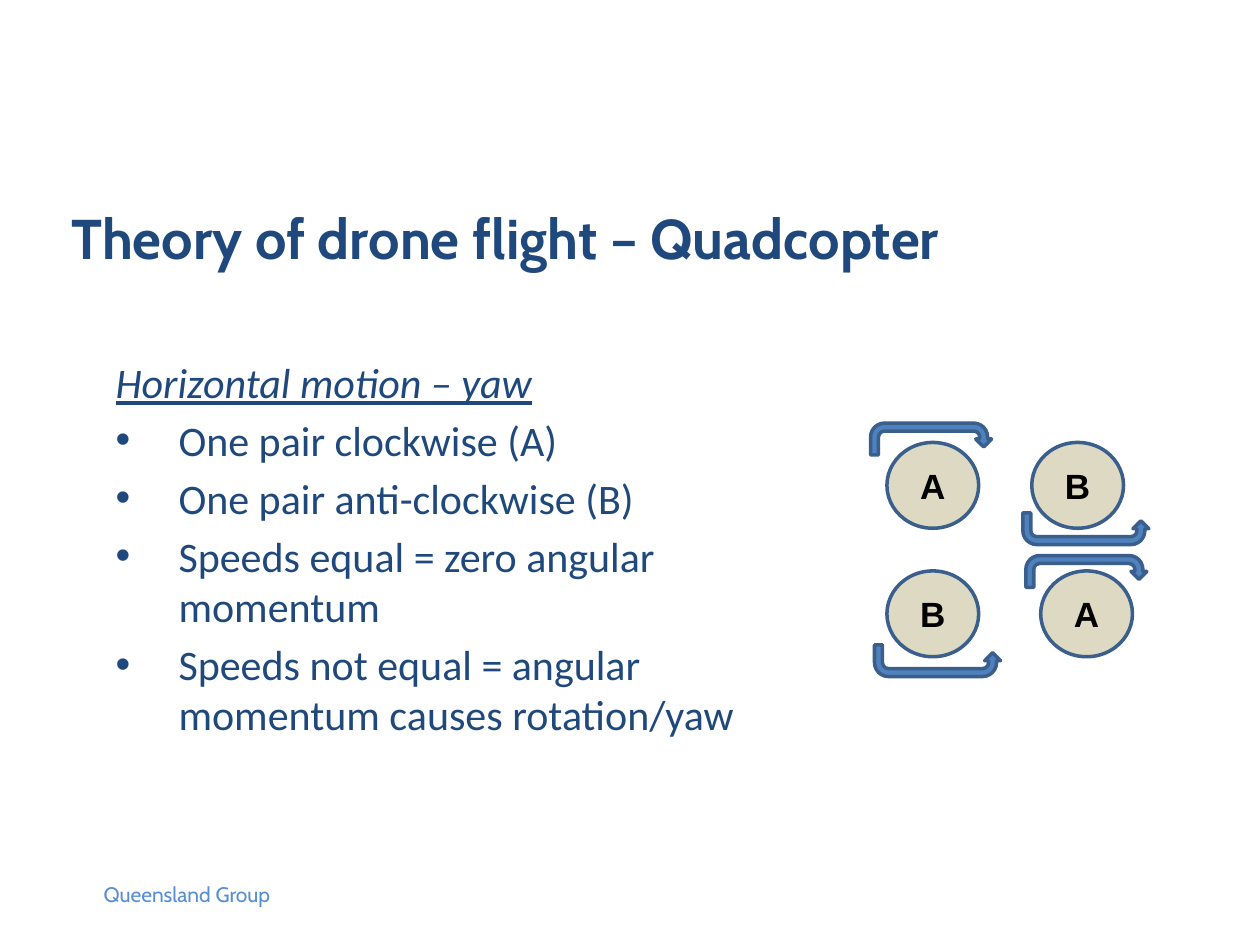
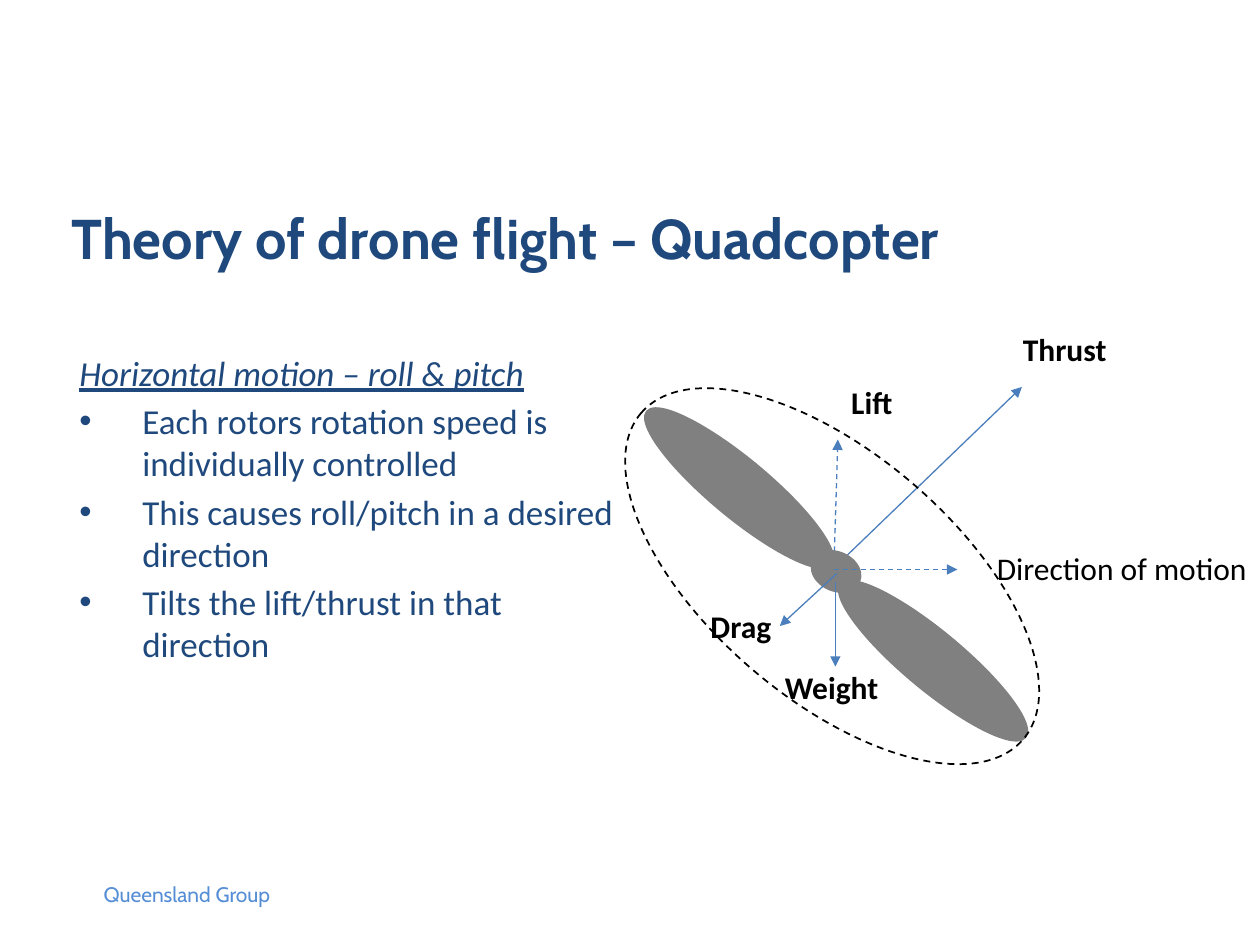
from lxml import etree
from pptx import Presentation
from pptx import util as u
from pptx.dml.color import RGBColor
from pptx.enum import dml, shapes, text
from pptx.oxml import ns

NAVY = RGBColor(0x1F, 0x49, 0x7D)
SKY = RGBColor(0x55, 0x8E, 0xD5)
BLUE = RGBColor(0x4F, 0x81, 0xBD)
EDGE_BLUE = RGBColor(0x3A, 0x5F, 0x8C)
ARROW_BLUE = RGBColor(0x4B, 0x7E, 0xBC)
SAND = RGBColor(0xDD, 0xD9, 0xC3)
GREY = RGBColor(0x80, 0x80, 0x80)
BLACK = RGBColor(0x00, 0x00, 0x00)

SHAPE = shapes.MSO_SHAPE
CENTRE = text.PP_ALIGN.CENTER
MIDDLE = text.MSO_ANCHOR.MIDDLE


def cm(*values):
    return [u.Cm(value) for value in values]


def write(paragraph, words, font="Calibri", size=18, color=BLACK, bold=False,
          italic=False, underline=False, align=text.PP_ALIGN.LEFT):
    paragraph.alignment = align
    run = paragraph.add_run()
    run.text = words
    run.font.name, run.font.size = font, u.Pt(size)
    run.font.color.rgb = color
    run.font.bold, run.font.italic, run.font.underline = bold, italic, underline


def add_bullet(paragraph):
    properties = paragraph._p.get_or_add_pPr()
    indent = u.Cm(1.27)
    properties.set("marL", str(indent))
    properties.set("indent", str(-indent))
    etree.SubElement(properties, ns.qn("a:buFont"), typeface="Arial")
    etree.SubElement(properties, ns.qn("a:buChar"), char="•")


class Deck:
    """Shared style and the slide being drawn."""

    def __init__(self):
        self.presentation = Presentation()
        self.presentation.slide_width = u.Cm(25.4)
        self.presentation.slide_height = u.Cm(19.05)
        self.slide = None

    def start_slide(self, title, footer):
        layout = self.presentation.slide_layouts[6]
        self.slide = self.presentation.slides.add_slide(layout)
        self.label(title, 1.19, 3.58, 22, 2.39, anchor=MIDDLE,
                   font="Cabin", size=32, color=NAVY, bold=True)
        self.label(footer, 1.19, 17.65, 5.16, 0.79, font="Cabin",
                   size=12, color=SKY, align=CENTRE)

    def text_frame(self, left, top, width, height, anchor=text.MSO_ANCHOR.TOP):
        box = self.slide.shapes.add_textbox(*cm(left, top, width, height))
        box.text_frame.word_wrap = True
        box.text_frame.vertical_anchor = anchor
        return box.text_frame

    def label(self, words, left, top, width, height=1.12,
              anchor=text.MSO_ANCHOR.TOP, **style):
        frame = self.text_frame(left, top, width, height, anchor)
        write(frame.paragraphs[0], words, **style)

    def bullets(self, heading, items, left, top, width, size):
        frame = self.text_frame(left, top, width, 7.04)
        write(frame.paragraphs[0], heading, size=size, color=NAVY,
              italic=True, underline=True)
        for item in items:
            paragraph = frame.add_paragraph()
            paragraph.space_before = u.Pt(round(size * 0.18, 1))
            add_bullet(paragraph)
            write(paragraph, item, size=size, color=NAVY)

    def shape(self, kind, left, top, width, height, fill, line, line_width=2,
              rotation=0, flipped=False, dashed=False):
        shape = self.slide.shapes.add_shape(kind, *cm(left, top, width, height))
        shape.shadow.inherit = False
        shape.rotation = rotation
        if fill is None:
            shape.fill.background()
        else:
            shape.fill.solid()
            shape.fill.fore_color.rgb = fill
        shape.line.color.rgb = line
        shape.line.width = u.Pt(line_width)
        if dashed:
            shape.line.dash_style = dml.MSO_LINE.DASH
        if flipped:
            shape._element.spPr.find(ns.qn("a:xfrm")).set("flipV", "1")
        return shape

    def rotor(self, letter, left, top):
        rotor = self.shape(SHAPE.OVAL, left, top, 1.85, 1.73, SAND, EDGE_BLUE)
        frame = rotor.text_frame
        frame.margin_left = frame.margin_right = 0
        frame.margin_top = frame.margin_bottom = 0
        frame.vertical_anchor = MIDDLE
        write(frame.paragraphs[0], letter, font="Arial", size=20,
              bold=True, align=CENTRE)

    def force(self, start, end, dashed=False):
        arrow = self.slide.shapes.add_connector(
            shapes.MSO_CONNECTOR.STRAIGHT, *cm(*start, *end))
        arrow.line.color.rgb = ARROW_BLUE
        arrow.line.width = u.Pt(0.75)
        if dashed:
            arrow.line.dash_style = dml.MSO_LINE.DASH
        etree.SubElement(arrow.line._get_or_add_ln(), ns.qn("a:tailEnd"),
                         type="triangle")
        etree.SubElement(arrow._element.spPr, ns.qn("a:effectLst"))


def draw_yaw(deck):
    deck.bullets("Horizontal motion – yaw", [
        "One pair clockwise (A)",
        "One pair anti-clockwise (B)",
        "Speeds equal = zero angular momentum",
        "Speeds not equal = angular momentum causes rotation/yaw",
    ], 2.08, 7.06, 13.41, 24)

    # Rotors
    for letter, left, top in (("A", 17.88, 8.92), ("A", 20.98, 11.51),
                              ("B", 20.8, 8.92), ("B", 17.88, 11.51)):
        deck.rotor(letter, left, top)

    # Spin directions: clockwise above, anti-clockwise below
    for left, top, width, flipped in ((17.55, 8.53, 2.44, False),
                                      (20.68, 11.2, 2.44, False),
                                      (17.63, 13, 2.54, True),
                                      (20.62, 10.34, 2.54, True)):
        deck.shape(SHAPE.U_TURN_ARROW, left, top, width, 0.64, BLUE,
                   EDGE_BLUE, flipped=flipped)


def draw_roll_and_pitch(deck):
    deck.bullets("Horizontal motion – roll & pitch", [
        "Each rotors rotation speed is individually controlled",
        "This causes roll/pitch in a desired direction",
        "Tilts the lift/thrust in that direction",
    ], 1.35, 6.96, 11.38, 20)

    # Lift and thrust start behind the propeller
    hub = (16.81, 11.48)
    deck.force(hub, (16.89, 8.86), dashed=True)
    deck.force((17.04, 11.23), (20.6, 7.8))

    # Propeller: two blades, hub and swept disc
    for left, top in ((12.5, 9.27), (16.41, 12.75)):
        deck.shape(SHAPE.OVAL, left, top, 4.8, 1.14, GREY, GREY, rotation=39.7)
    deck.shape(SHAPE.OVAL, 16.36, 11.15, 0.99, 0.74, GREY, GREY, rotation=24.3)
    deck.shape(SHAPE.OVAL, 11.71, 9.14, 10.13, 4.95, None, BLACK,
               line_width=1, rotation=40.5, dashed=True)

    # Motion, weight and drag
    deck.force(hub, (19.3, 11.48), dashed=True)
    deck.force((16.84, 11.73), (16.84, 13.44))
    deck.force((16.87, 11.56), (15.72, 12.62))

    # Names of the forces
    for name, left, top, width in (("Thrust", 20.12, 6.53, 2.69),
                                   ("Lift", 16.43, 7.59, 2.29),
                                   ("Drag", 13.59, 12.12, 2.69),
                                   ("Weight", 15.42, 13.34, 2.69)):
        deck.label(name, left, top, width, bold=True, align=CENTRE)
    deck.label("Direction of motion", 19.3, 10.95, 6.63, align=CENTRE)


def main():
    deck = Deck()
    for draw in (draw_yaw, draw_roll_and_pitch):
        deck.start_slide("Theory of drone flight – Quadcopter",
                         "Queensland Group")
        draw(deck)
    deck.presentation.save("out.pptx")


if __name__ == "__main__":
    main()
